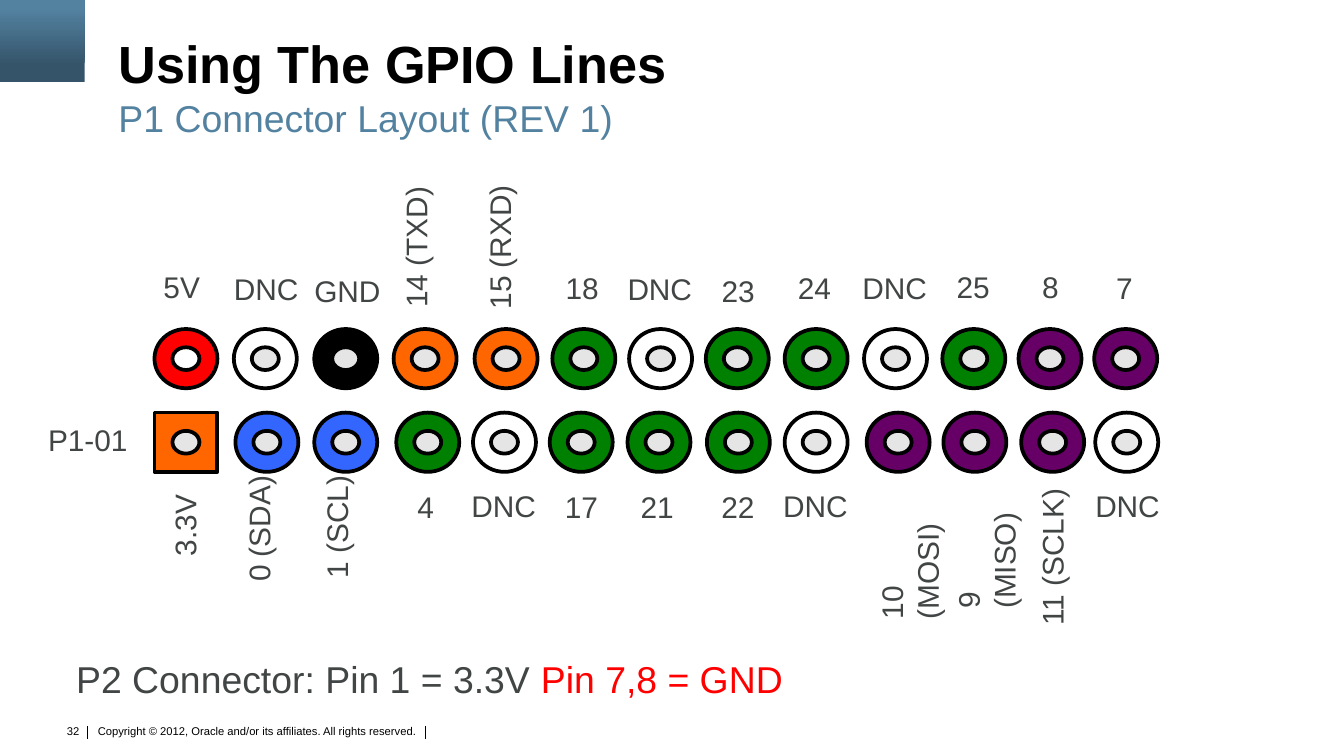
from lxml.etree import SubElement
from pptx import Presentation
from pptx.dml.color import RGBColor
from pptx.enum.shapes import MSO_CONNECTOR, MSO_SHAPE
from pptx.enum.text import MSO_ANCHOR, MSO_AUTO_SIZE, PP_ALIGN
from pptx.oxml.ns import qn
from pptx.util import Cm, Pt

BLACK, WHITE, GREY, SLATE = "000000", "FFFFFF", "E5E5E5", "424545"
RED, ORANGE, GREEN, BLUE, PURPLE = "FF0000", "FF6600", "008000", "3366FF", "660066"
STEEL, DEEP_STEEL = "5382A1", "355469"

PIN_WIDTH, PIN_HEIGHT = 1.19, 1.12
HOLE_WIDTH, HOLE_HEIGHT = 0.51, 0.43
LABEL_HEIGHT, UPRIGHT_WIDTH = 0.94, 1.19
TOP_ROW, BOTTOM_ROW = 6.22, 7.8

TOP_PINS = [
    (2.92, RED), (4.42, WHITE), (5.94, BLACK), (7.44, ORANGE), (8.97, ORANGE),
    (10.44, GREEN), (11.89, WHITE), (13.34, GREEN), (14.83, GREEN),
    (16.33, WHITE), (17.81, GREEN), (19.25, PURPLE), (20.68, PURPLE),
]
BOTTOM_PINS = [
    (2.92, ORANGE), (4.45, BLUE), (5.94, BLUE), (7.49, GREEN), (8.94, WHITE),
    (10.39, GREEN), (11.86, GREEN), (13.36, GREEN), (14.83, WHITE),
    (16.38, PURPLE), (17.83, PURPLE), (19.3, PURPLE), (20.7, WHITE),
]
LEFT_LABELS = [
    ("P1-01", 0.66, 7.85, 2.03), ("5V", 2.84, 4.95, 1.22),
    ("DNC", 4.17, 5, 1.75), ("GND", 5.69, 5.03, 1.78),
    ("18", 10.44, 4.98, 1.57), ("DNC", 11.61, 5, 1.75),
    ("23", 13.39, 5.03, 1.14), ("24", 14.83, 4.98, 1.22),
    ("DNC", 16.05, 4.98, 1.75), ("25", 17.83, 4.95, 1.22),
    ("DNC", 8.66, 9.09, 1.75), ("DNC", 14.55, 9.09, 1.75),
    ("DNC", 20.45, 9.09, 1.75),
]
CENTRED_LABELS = [
    ("8", 19.28, 4.95, 1.14), ("7", 20.68, 4.98, 1.14),
    ("4", 7.37, 9.12, 1.35), ("17", 10.24, 9.12, 1.5),
    ("21", 11.66, 9.12, 1.52), ("22", 13.26, 9.12, 1.37),
]
UPRIGHT_LABELS = [
    ("0 (SDA)", 4.42, 8.56, 2.69), ("1 (SCL)", 5.89, 8.97, 2.21),
    ("14 (TXD)", 7.39, 2.92, 3.15), ("15 (RXD)", 8.97, 3.23, 2.87),
    ("10 (MOSI)", 16.38, 9.09, 2.87), ("9 (MISO)", 17.83, 9.02, 2.74),
]
TURNED_LABELS = [("3.3V", 2.62, 9.42, 1.75), ("11 (SCLK)", 18.26, 9.98, 3.25)]
UNWRAPPED = {"DNC", "GND", "23", "1 (SCL)"}


def colour(code):
    return RGBColor.from_string(code)


def add_text(slide, box, runs, size, bold=False, align=PP_ALIGN.LEFT,
             anchor=MSO_ANCHOR.TOP, insets=None, wrap=True, grow=False):
    caption = slide.shapes.add_textbox(*map(Cm, box))
    frame = caption.text_frame
    frame.word_wrap = wrap
    frame.vertical_anchor = anchor
    if grow:
        frame.auto_size = MSO_AUTO_SIZE.SHAPE_TO_FIT_TEXT
    if insets:
        across, down = map(Cm, insets)
        frame.margin_left = frame.margin_right = across
        frame.margin_top = frame.margin_bottom = down
    paragraph = frame.paragraphs[0]
    paragraph.alignment = align
    for words, code in runs:
        run = paragraph.add_run()
        run.text = words
        run.font.name = "Arial"
        run.font.size = Pt(size)
        run.font.bold = bold
        run.font.color.rgb = colour(code)
    return caption


def add_label(slide, words, box, align=PP_ALIGN.LEFT):
    return add_text(slide, box, [(words, SLATE)], 16, align=align,
                    wrap=words not in UNWRAPPED, grow=True)


def add_outlined(slide, preset, box, code):
    part = slide.shapes.add_shape(preset, *map(Cm, box))
    part.shadow.inherit = False
    part.fill.solid()
    part.fill.fore_color.rgb = colour(code)
    part.line.color.rgb = colour(BLACK)
    part.line.width = Pt(2)


def add_pin(slide, left, top, code, hole=GREY, square=False):
    preset = MSO_SHAPE.RECTANGLE if square else MSO_SHAPE.OVAL
    add_outlined(slide, preset, (left, top, PIN_WIDTH, PIN_HEIGHT), code)
    hole_box = (left + (PIN_WIDTH - HOLE_WIDTH) / 2,
                top + (PIN_HEIGHT - HOLE_HEIGHT) / 2, HOLE_WIDTH, HOLE_HEIGHT)
    add_outlined(slide, MSO_SHAPE.OVAL, hole_box, hole)


def add_divider(slide, left):
    divider = slide.shapes.add_connector(
        MSO_CONNECTOR.STRAIGHT, Cm(left), Cm(13.72), Cm(left), Cm(13.97))
    divider.line.color.rgb = colour(BLACK)
    divider.line.width = Pt(0.5)
    SubElement(divider._element.spPr, qn("a:effectLst"))


def add_corner(slide):
    corner = slide.shapes.add_shape(MSO_SHAPE.RECTANGLE, 0, 0, Cm(1.6), Cm(1.55))
    corner.shadow.inherit = False
    corner.line.fill.background()
    corner.fill.gradient()
    corner.fill.gradient_angle = 90
    stops = [(0.2, DEEP_STEEL), (0.9, STEEL)]
    for stop, (position, code) in zip(corner.fill.gradient_stops, stops):
        stop.position = position
        stop.color.rgb = colour(code)


def add_footer(slide):
    copyright_line = "Copyright © 2012, Oracle and/or its affiliates. All rights reserved."
    add_text(slide, (1.75, 13.64, 6.96, 0.61), [(copyright_line, BLACK)], 6,
             insets=(0.1, 0.05))
    add_text(slide, (0.99, 13.56, 0.76, 0.51), [("32", BLACK)], 6,
             align=PP_ALIGN.RIGHT, wrap=False, grow=True)
    for left in (1.65, 8.04):
        add_divider(slide, left)


def add_headings(slide):
    title = add_text(slide, (2.24, 0.69, 22.86, 1.12), [("Using The GPIO Lines", BLACK)],
                     28, bold=True, anchor=MSO_ANCHOR.MIDDLE, insets=(0, 0))
    title.text_frame.paragraphs[0].line_spacing = 0.9
    add_text(slide, (2.24, 1.8, 22.86, 0.84), [("P1 Connector Layout (REV 1)", STEEL)],
             20, anchor=MSO_ANCHOR.BOTTOM, insets=(0, 0))


def add_connector_pins(slide):
    for index, (left, code) in enumerate(TOP_PINS):
        add_pin(slide, left, TOP_ROW, code, hole=GREY if index else WHITE)
    for index, (left, code) in enumerate(BOTTOM_PINS):
        add_pin(slide, left, BOTTOM_ROW, code, square=index == 0)


def add_pin_labels(slide):
    for labels, align in ((LEFT_LABELS, PP_ALIGN.LEFT), (CENTRED_LABELS, PP_ALIGN.CENTER)):
        for words, left, top, width in labels:
            add_label(slide, words, (left, top, width, LABEL_HEIGHT), align)
    for words, left, top, height in UPRIGHT_LABELS:
        upright = add_label(slide, words, (left, top, UPRIGHT_WIDTH, height))
        upright.text_frame._txBody.bodyPr.set("vert", "vert270")
    for words, left, top, width in TURNED_LABELS:
        add_label(slide, words, (left, top, width, LABEL_HEIGHT)).rotation = 270


def main():
    deck = Presentation()
    deck.slide_width, deck.slide_height = Cm(25.4), Cm(14.29)
    slide = deck.slides.add_slide(deck.slide_layouts[6])
    add_footer(slide)
    add_corner(slide)
    add_headings(slide)
    add_connector_pins(slide)
    add_pin_labels(slide)
    add_text(slide, (1.19, 12.27, 14.38, 1.12),
             [("P2 Connector: Pin 1 = 3.3V ", SLATE), ("Pin 7,8 = GND", RED)],
             20, grow=True)
    deck.save("out.pptx")


if __name__ == "__main__":
    main()
